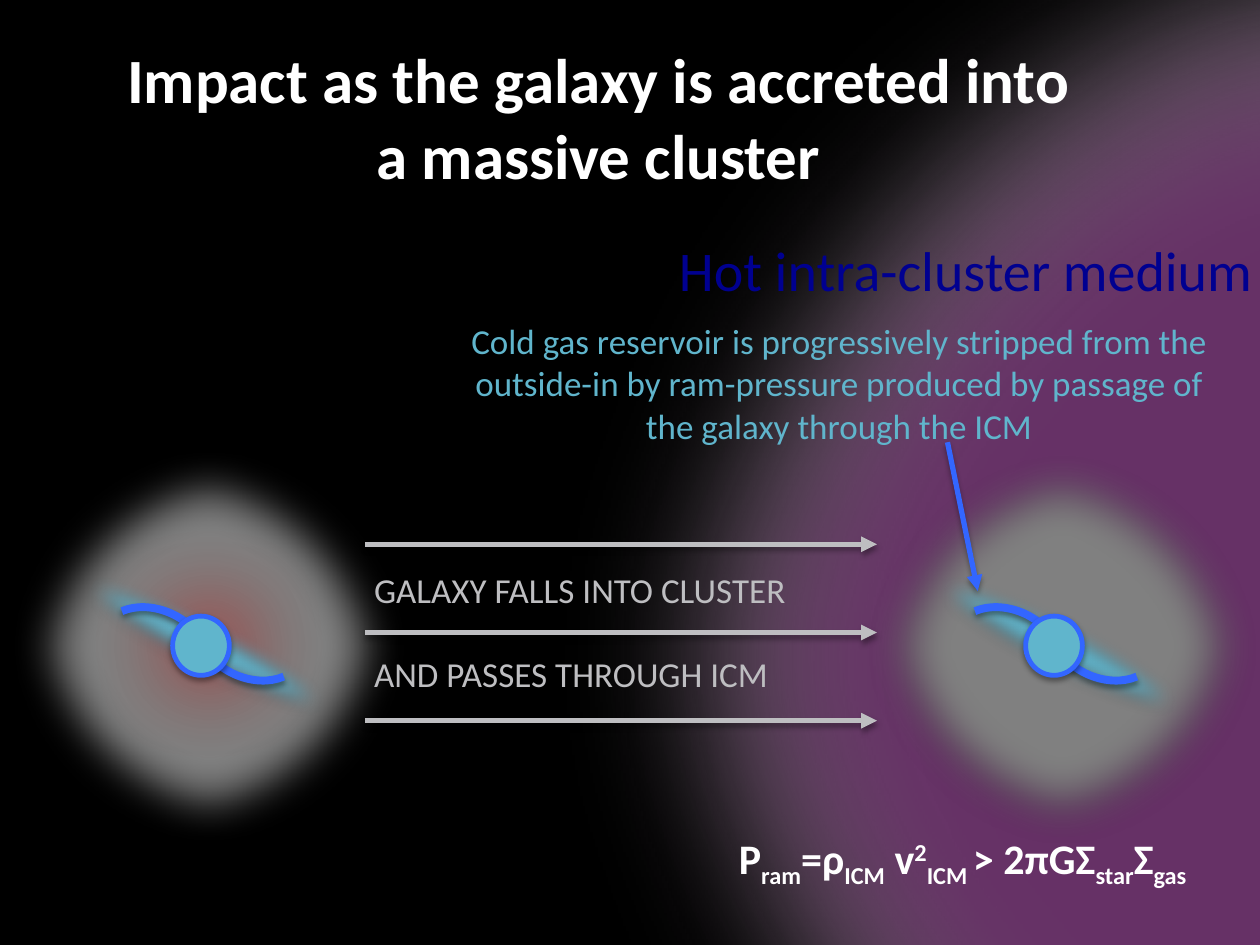
import pptx
import pptx.dml.color
import pptx.enum.shapes
import pptx.enum.text
import pptx.oxml
import pptx.oxml.ns
import pptx.util
from lxml import etree

Pt = pptx.util.Pt
rgb = pptx.dml.color.RGBColor.from_string
ALIGN = pptx.enum.text.PP_ALIGN
ANCHOR = pptx.enum.text.MSO_ANCHOR
KIND = pptx.enum.shapes.MSO_CONNECTOR
OVAL = pptx.enum.shapes.MSO_SHAPE.OVAL
qn = pptx.oxml.ns.qn

prs = pptx.Presentation()
prs.slide_width, prs.slide_height = pptx.util.Inches(10), pptx.util.Inches(7.5)
COL = prs.slide_width / 100  # grid of 100 columns by 75 rows, square cells


def draw(shapes, kind, at, fill=None, alpha=None, line="EBA900", width=0.5,
         rot=0, soft=0, arrow=False):
    """Ellipse at left, top, width, height, or connector from x, y to x, y."""
    pos = [round(v * COL) for v in at]
    if kind == OVAL:
        sp = shapes.add_shape(kind, *pos)
        sp.fill.solid()
        sp.fill.fore_color.rgb = rgb(fill)
    else:
        sp = shapes.add_connector(kind, *pos)
    sp.line.color.rgb = rgb(line)
    sp.line.width = Pt(width)
    spPr = sp._element.spPr
    if rot:
        spPr.find(qn("a:xfrm")).set("rot", str(round(rot * 60000)))
    if alpha:
        clr = spPr.find(qn("a:solidFill")).find(qn("a:srgbClr"))
        etree.SubElement(clr, qn("a:alpha")).set("val", str(alpha * 1000))
    if arrow:
        etree.SubElement(spPr.find(qn("a:ln")), qn("a:tailEnd")).set("type", "triangle")
    # Soft shadow straight below, then the feathered edge
    fx = etree.SubElement(spPr, qn("a:effectLst"))
    shadow = etree.SubElement(fx, qn("a:outerShdw"), blurRad=str(Pt(3.1)),
                              dist=str(Pt(1.9)), dir="5400000", rotWithShape="0")
    clr = etree.SubElement(shadow, qn("a:srgbClr"), val="000000")
    etree.SubElement(clr, qn("a:alpha"), val="36000")
    if soft:
        etree.SubElement(fx, qn("a:softEdge"), rad=str(Pt(soft)))
    return sp


def text(sp, paras, at, size, color, bold=False, align=ALIGN.LEFT, wrap=True,
         anchor=ANCHOR.TOP, inset=(1, 0.5, 1, 0.5), before=0, spacing=None):
    """Each paragraph is a list of (text, baseline shift in percent)."""
    sp.left, sp.top, sp.width, sp.height = [round(v * COL) for v in at]
    tf = sp.text_frame
    tf.word_wrap, tf.vertical_anchor = wrap, anchor
    tf.auto_size = pptx.enum.text.MSO_AUTO_SIZE.NONE
    tf.margin_left, tf.margin_top, tf.margin_right, tf.margin_bottom = [
        round(v * COL) for v in inset]
    for i, runs in enumerate(paras):
        p = tf.add_paragraph() if i else tf.paragraphs[0]
        p.alignment, p.line_spacing = align, spacing
        p.space_before = Pt(before if i else 0)
        for words, shift in runs:
            r = p.add_run()
            r.text = words
            r.font.name, r.font.size, r.font.bold = "Calibri", Pt(size), bold
            r.font.color.rgb = rgb(color)
            if shift:
                r.font._element.set("baseline", str(shift * 1000))


s = prs.slides.add_slide(prs.slide_layouts[5])
s.background.fill.solid()
s.background.fill.fore_color.rgb = rgb("000000")

# Cluster with its hot medium
draw(s.shapes, OVAL, (41.8, -16.1, 126.3, 136.5), "808080", soft=100)
draw(s.shapes, OVAL, (45.4, -10.9, 117.2, 127.4), "660066", alpha=52, soft=100)

# Title, brought in front of the cluster
title = s.shapes.title
s.shapes._spTree.append(title._element)
text(title, [[("Impact as the galaxy is accreted into a massive cluster", 0)]],
     (7.5, 3.6, 79.5, 11.3), 36, "FFFFFF", bold=True, align=ALIGN.CENTER,
     anchor=ANCHOR.MIDDLE, inset=(1, 0, 0.5, 0))

# Galaxy before (with hot halo) and after (stripped), the same 67.7 columns apart
for x, infalling in ((0, True), (67.7, False)):
    if infalling:
        shapes = s.shapes.add_group_shape().shapes
    else:
        shapes = s.shapes
    draw(shapes, OVAL, (0.4 + x, 35.1, 32.3, 32.3), "808080", soft=25)
    if infalling:
        draw(shapes, OVAL, (3.8, 38.2, 25.5, 25.8), "FF0000", alpha=47, soft=50)
    draw(shapes, OVAL, (4 + x, 48.4, 24.6, 5.6), "60B5CC", line="3366FF",
         rot=26.1, soft=10)
    draw(shapes, KIND.CURVE, (11.2 + x, 46.2, 21 + x, 56), line="3366FF",
         width=4.5, rot=337)
    draw(shapes, OVAL, (13.7 + x, 48.9, 4.5, 4.7), "60B5CC", line="3366FF", width=2.75)

# Infall arrows and their caption
arrows = s.shapes.add_group_shape().shapes
for row in range(3):
    y = 43.2 + 7 * row
    draw(arrows, KIND.STRAIGHT, (29, y, 69.6, y), line="BEBEC1", width=3, arrow=True)
text(s.shapes.add_textbox(0, 0, 0, 0),
     [[("GALAXY FALLS INTO CLUSTER", 0)], [("AND PASSES THROUGH ICM", 0)]],
     (28.7, 44.6, 35.8, 11.1), 20, "BEBEC1", before=24)

# Labels on the cluster side
text(s.shapes.add_textbox(0, 0, 0, 0), [[("Hot intra-cluster medium", 0)]],
     (52.9, 18.2, 48.2, 6.4), 32, "000090", wrap=False)
text(s.shapes.add_textbox(0, 0, 0, 0),
     [[("Cold gas reservoir is progressively stripped from the outside-in by "
        "ram-pressure produced by passage of the galaxy through the ICM", 0)]],
     (35.8, 24.9, 61.6, 11.1), 20, "60B5CC", align=ALIGN.CENTER)
draw(s.shapes, KIND.STRAIGHT, (75.2, 35.1, 77.6, 46.9), line="3366FF", width=3, arrow=True)

# Ram-pressure condition
text(s.shapes.add_textbox(0, 0, 0, 0),
     [[("P", 0), ("ram", -25), ("=ρ", 0), ("ICM", -25), (" v", 0), ("2", 30),
       ("ICM ", -25), ("> 2πGΣ", 0), ("star", -25), ("Σ", 0), ("gas", -25)]],
     (53.9, 65.1, 45.2, 5.5), 24, "FFFFFF", bold=True, align=ALIGN.CENTER,
     anchor=ANCHOR.BOTTOM, inset=(0, 0, 0.2, 0), spacing=1.2)

prs.save("out.pptx")
